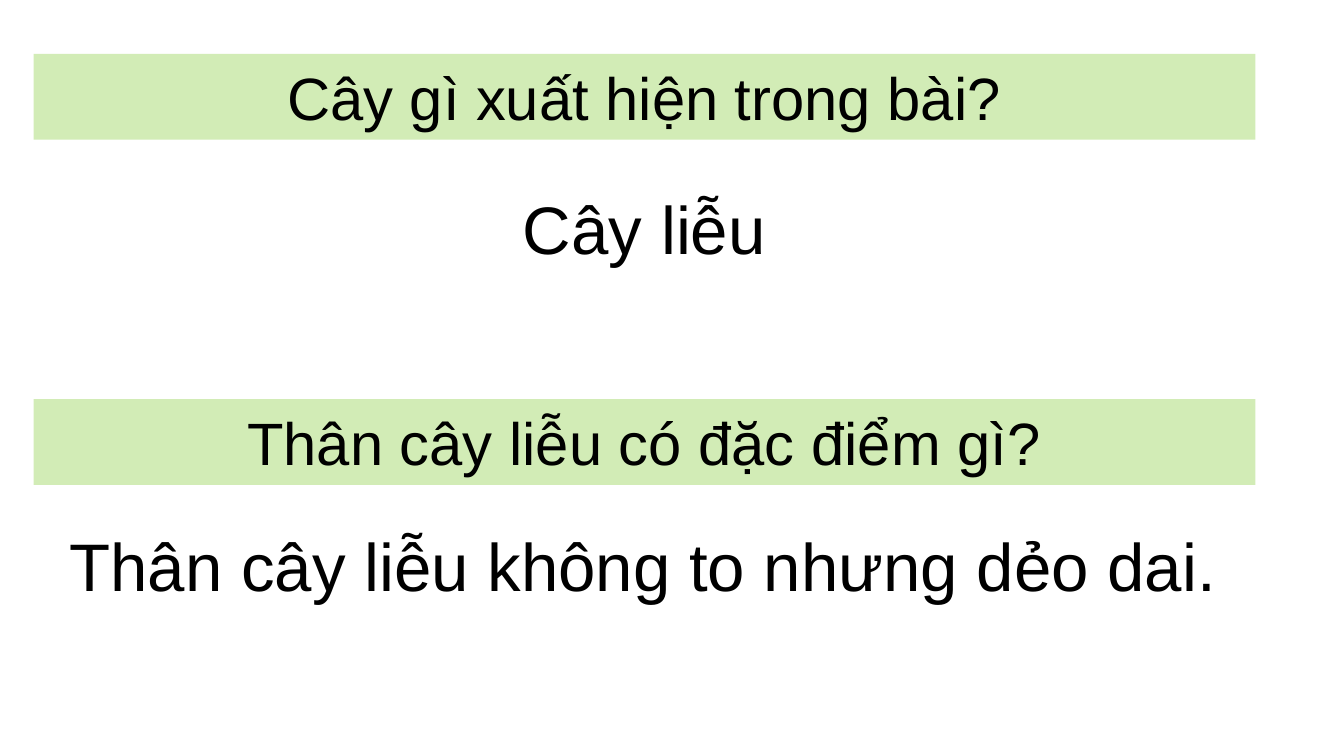
from dataclasses import dataclass

from pptx import Presentation
from pptx.dml.color import RGBColor
from pptx.enum.shapes import MSO_SHAPE
from pptx.enum.text import MSO_ANCHOR, PP_ALIGN
from pptx.util import Pt

RECT = MSO_SHAPE.RECTANGLE
TOP, MIDDLE = MSO_ANCHOR.TOP, MSO_ANCHOR.MIDDLE
CENTER, JUSTIFY = PP_ALIGN.CENTER, PP_ALIGN.JUSTIFY


@dataclass(frozen=True)
class Theme:
    font: str = "Arial"
    ink: RGBColor = RGBColor(0, 0, 0)
    band: RGBColor = RGBColor(0xD2, 0xEC, 0xB6)
    ask: int = 32
    reply: int = 36


THEME = Theme()


def write(shape, text, size, align, anchor):
    frame = shape.text_frame
    frame.word_wrap = True
    frame.vertical_anchor = anchor
    para = frame.paragraphs[0]
    para.alignment = align
    run = para.add_run()
    run.text = text
    run.font.name = THEME.font
    run.font.size = Pt(size)
    run.font.color.rgb = THEME.ink


# Question on a green band
def add_ask(slide, box, text):
    band = slide.shapes.add_shape(RECT, *map(Pt, box))
    band.shadow.inherit = False
    band.fill.solid()
    band.fill.fore_color.rgb = THEME.band
    band.line.fill.background()
    write(band, text, THEME.ask, CENTER, TOP)


# Answer, offset from the corner of its band
def add_reply(slide, box, shift, text, align):
    left, top = box[:2]
    dx, dy, width, height = shift
    note = slide.shapes.add_textbox(
        Pt(left + dx), Pt(top + dy), Pt(width), Pt(height))
    write(note, text, THEME.reply, align, MIDDLE)


def main():
    deck = Presentation()
    deck.slide_width, deck.slide_height = Pt(720), Pt(405)
    slide = deck.slides.add_slide(deck.slide_layouts[6])

    pairs = [
        ("Cây gì xuất hiện trong bài?", "Cây liễu",
         (77, 65.5, 500.4, 55.4), CENTER),
        ("Thân cây liễu có đặc điểm gì?",
         "Thân cây liễu không to nhưng dẻo dai.",
         (12.2, 54.8, 666, 67.7), JUSTIFY),
    ]
    for row, (ask, reply, shift, align) in enumerate(pairs):
        box = (18, 28.8 + 185 * row, 654.5, 46)
        add_ask(slide, box, ask)
        add_reply(slide, box, shift, reply, align)

    deck.save("out.pptx")


if __name__ == "__main__":
    main()
